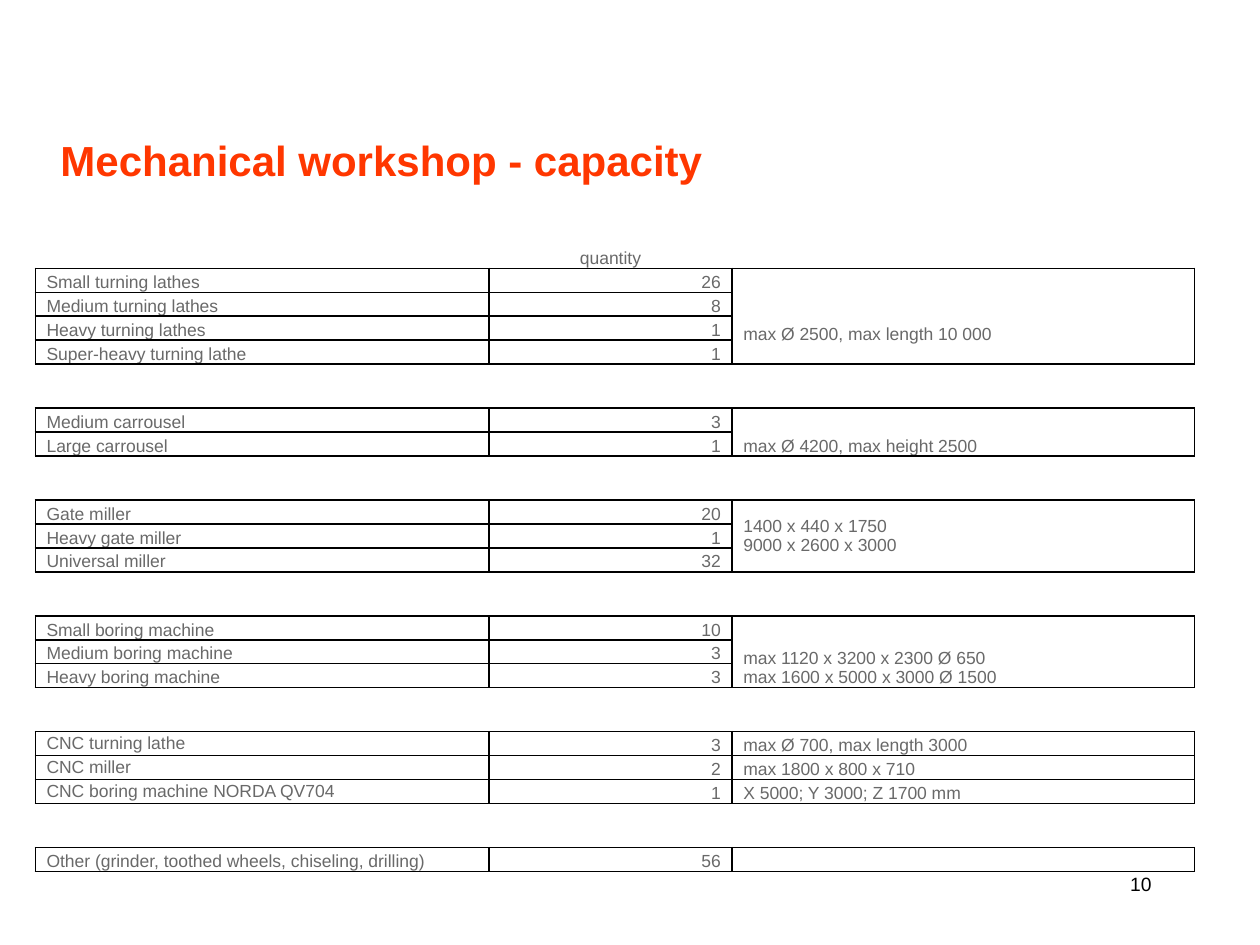
"""Build the mechanical workshop capacity slide."""
from lxml import etree
from pptx import Presentation
from pptx.dml.color import RGBColor
from pptx.enum.text import MSO_ANCHOR as ANCHOR, PP_ALIGN as ALIGN
from pptx.oxml.ns import qn
from pptx.util import Inches, Pt

COLUMNS = [3.6, 1.93, 3.67]
HEADER_H, ROW_H, GAP_H = 0.58, 0.19, 0.35
GROUPS = [
    {"machines": [("Small turning lathes", 26), ("Medium turning lathes", 8),
                  ("Heavy turning lathes", 1), ("Super-heavy turning lathe", 1)],
     "limits": "max Ø 2500, max length 10 000", "below": 0.16},
    {"machines": [("Medium carrousel", 3), ("Large carrousel", 1)],
     "limits": "max Ø 4200, max height 2500"},
    {"machines": [("Gate miller", 20), ("Heavy gate miller", 1), ("Universal miller", 32)],
     "limits": "1400 x 440 x 1750\n9000 x 2600 x 3000", "anchor": ANCHOR.MIDDLE},
    {"machines": [("Small boring machine", 10), ("Medium boring machine", 3),
                  ("Heavy boring machine", 3)],
     "limits": "max 1120 x 3200 x 2300 Ø 650\nmax 1600 x 5000 x 3000 Ø 1500"},
    {"machines": [("CNC turning lathe", 3), ("CNC miller", 2),
                  ("CNC boring machine NORDA QV704", 1)],
     "limits": ["max Ø 700, max length 3000", "max 1800 x 800 x 710",
                "X 5000; Y 3000; Z 1700 mm"],
     "name_anchor": ANCHOR.MIDDLE},
    {"machines": [("Other (grinder, toothed wheels, chiseling, drilling)", 56)], "limits": ""},
]


def rgb(value):
    return RGBColor.from_string(value)


def write(tf, text, size=10, color="696969", bold=False, align=ALIGN.LEFT):
    tf.word_wrap = True
    for i, line in enumerate(text.split("\n")):
        p = tf.paragraphs[0] if i == 0 else tf.add_paragraph()
        p.alignment = align
        font = p.font
        if line:
            r = p.add_run()
            r.text = line
            font = r.font
        font.name, font.size, font.bold = "Arial", Pt(size), bold
        font.color.rgb = rgb(color)


class SlideBuilder:
    """Hold the table style and the current slide."""

    line_color, line_width = "000000", 1

    def __init__(self, prs):
        self.s = prs.slides.add_slide(prs.slide_layouts[5])

    def frame(self, sp, x, y, w, h, anchor):
        sp.left, sp.top, sp.width, sp.height = map(Inches, (x, y, w, h))
        tf = sp.text_frame
        tf.margin_left = tf.margin_right = tf.margin_top = tf.margin_bottom = 0
        tf.vertical_anchor = anchor
        return tf

    def title(self, text, x, y, w, h):
        tf = self.frame(self.s.shapes.title, x, y, w, h, ANCHOR.BOTTOM)
        write(tf, text, size=24, color="FF3700", bold=True)

    def text(self, text, x, y, w, h, **fmt):
        sp = self.s.shapes.add_textbox(0, 0, 0, 0)
        write(self.frame(sp, x, y, w, h, ANCHOR.TOP), text, **fmt)

    def table(self, x, y, widths, heights):
        size = map(Inches, (x, y, sum(widths), sum(heights)))
        table = self.s.shapes.add_table(len(heights), len(widths), *size).table
        table.first_row = table.horz_banding = False
        for column, w in zip(table.columns, widths):
            column.width = Inches(w)
        for row, h in zip(table.rows, heights):
            row.height = Inches(h)
        return table

    def cell(self, cell, text="", sides="LRTB", anchor=ANCHOR.BOTTOM, below=0, **fmt):
        cell.margin_left = cell.margin_right = Inches(0.09)
        cell.margin_top, cell.margin_bottom = 0, Inches(below)
        cell.vertical_anchor = anchor
        cell.fill.background()
        write(cell.text_frame, text, **fmt)
        self.borders(cell, sides)

    def borders(self, cell, sides):
        tc_pr = cell._tc.get_or_add_tcPr()
        for i, side in enumerate("LRTB"):
            ln = etree.Element(qn("a:ln" + side), w=str(Pt(self.line_width)))
            if side in sides:
                fill = etree.SubElement(ln, qn("a:solidFill"))
                etree.SubElement(fill, qn("a:srgbClr"), val=self.line_color)
            else:
                etree.SubElement(ln, qn("a:noFill"))
            tc_pr.insert(i, ln)

    def group(self, table, top, machines, limits, name_anchor=ANCHOR.BOTTOM, **limit_fmt):
        merged = isinstance(limits, str)
        for i, (name, quantity) in enumerate(machines):
            row = top + i
            self.cell(table.cell(row, 0), name, anchor=name_anchor)
            self.cell(table.cell(row, 1), str(quantity), align=ALIGN.RIGHT)
            limit = limits[i] if not merged else limits if i == 0 else ""
            self.cell(table.cell(row, 2), limit, **limit_fmt)
        if merged and len(machines) > 1:
            table.cell(top, 2).merge(table.cell(top + len(machines) - 1, 2))


def main():
    prs = Presentation()
    prs.slide_width, prs.slide_height = Inches(10), Inches(7.5)
    b = SlideBuilder(prs)
    b.text("10", 7.06, 6.92, 2.08, 0.3, size=11, color="000000", align=ALIGN.RIGHT)
    b.title("Mechanical workshop - capacity", 0.48, 0.6, 9.01, 0.87)

    heights = []
    for group in GROUPS:
        heights += [GAP_H if heights else HEADER_H] + [ROW_H] * len(group["machines"])
    table = b.table(0.28, 1.55, COLUMNS, heights)
    row = 0
    for group in GROUPS:
        for col in range(len(COLUMNS)):
            heading = "quantity" if (row, col) == (0, 1) else ""
            b.cell(table.cell(row, col), heading, sides="TB" if row else "B", align=ALIGN.CENTER)
        b.group(table, row + 1, **group)
        row += 1 + len(group["machines"])
    prs.save("out.pptx")


if __name__ == "__main__":
    main()
